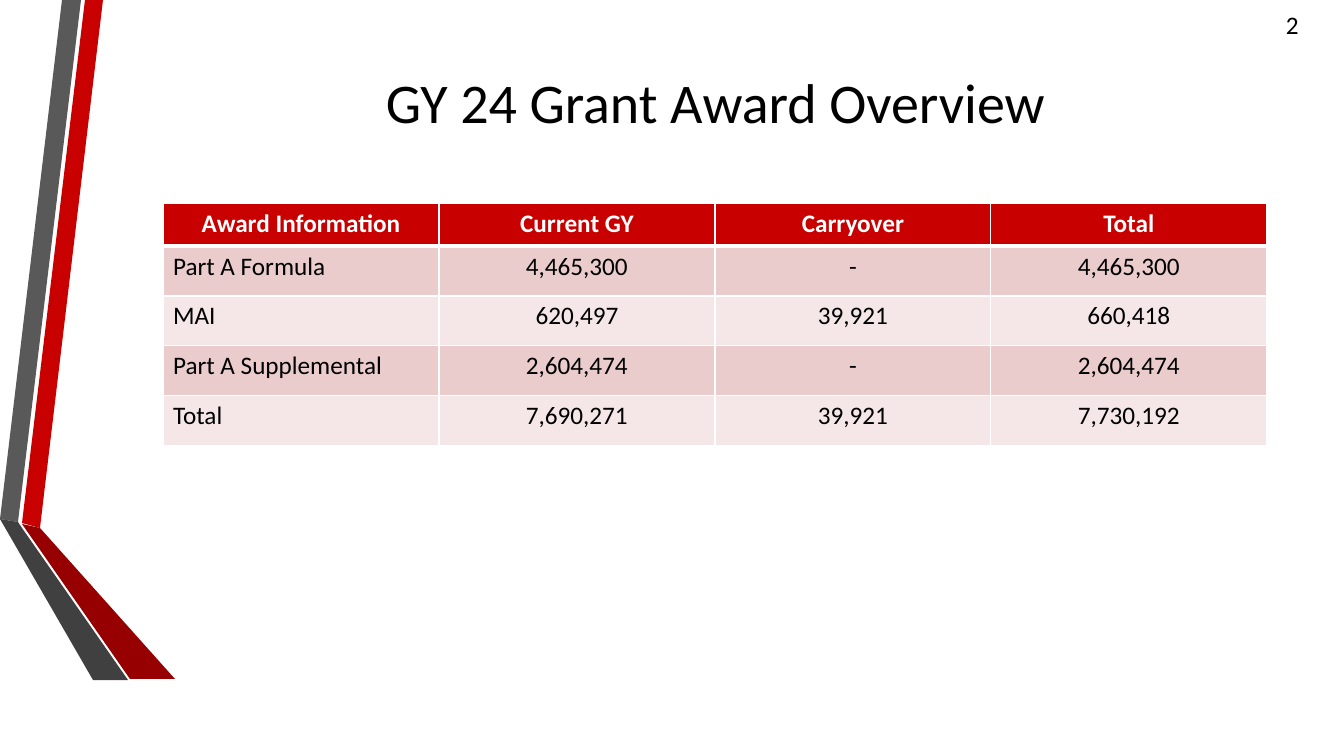
"""Builds the grant award overview slide with its ribbon and award table."""
from lxml import etree
from pptx import Presentation
from pptx.dml.color import RGBColor
from pptx.enum.text import MSO_ANCHOR, PP_ALIGN
from pptx.oxml.ns import qn
from pptx.util import Pt

LEFT, CENTER = PP_ALIGN.LEFT, PP_ALIGN.CENTER
MIDDLE = MSO_ANCHOR.MIDDLE
TITLE_ONLY = 5
EMU_PER_PX = 914400 / 100.8

COLORS = {
    "red": "C80000",
    "dark red": "960000",
    "gray": "595959",
    "dark gray": "404040",
    "band": "EBCCCC",
    "light band": "F5E7E7",
    "white": "FFFFFF",
    "black": "000000",
}

RIBBON = [
    ("red", [(22, 523), (40, 528), (103, 0), (85, 0)]),
    ("gray", [(81, 0), (62, 0), (0, 519), (18, 522)]),
    ("dark red", [(22, 524), (130, 679), (175, 679), (40, 528)]),
    ("dark gray", [(128, 680), (22, 528), (18, 522), (0, 519), (93, 680)]),
]

AWARDS = [
    ("Award Information", "Current GY", "Carryover", "Total"),
    ("Part A Formula", "4,465,300", "-", "4,465,300"),
    ("MAI", "620,497", "39,921", "660,418"),
    ("Part A Supplemental", "2,604,474", "-", "2,604,474"),
    ("Total", "7,690,271", "39,921", "7,730,192"),
]


def px(length):
    """Turn px into EMU."""
    return round(length * EMU_PER_PX)


def rgb(color):
    """Look up a named colour."""
    return RGBColor.from_string(COLORS[color])


class SlideBuilder:
    """Holds the style and the current slide."""

    def __init__(self, slide, font="Calibri", size=18):
        """Keep the slide and its default text style."""
        self.slide, self.font, self.size = slide, font, size

    def add_text(self, frame, text, color="black", size=None, bold=False, align=LEFT):
        """Put one styled run into a text frame."""
        paragraph = frame.paragraphs[0]
        paragraph.alignment = align
        run = paragraph.add_run()
        run.text = text
        run.font.name, run.font.size = self.font, Pt(size or self.size)
        run.font.bold, run.font.color.rgb = bold, rgb(color)

    def title(self, text, left, top, width, height):
        """Place and fill the title placeholder."""
        heading = self.slide.shapes.title
        heading.left, heading.top = px(left), px(top)
        heading.width, heading.height = px(width), px(height)
        heading.text_frame.vertical_anchor = MIDDLE
        self.add_text(heading.text_frame, text, size=40, align=CENTER)

    def label(self, text, left, top, width, height):
        """Add a text box."""
        box = self.slide.shapes.add_textbox(px(left), px(top), px(width), px(height))
        box.text_frame.word_wrap = True
        self.add_text(box.text_frame, text)

    def polygon(self, points, color):
        """Add a filled outline without a border."""
        outline = self.slide.shapes.build_freeform(*points[0], scale=EMU_PER_PX)
        outline.add_line_segments(points[1:], close=True)
        panel = outline.convert_to_shape()
        panel.shadow.inherit = False
        panel.fill.solid()
        panel.fill.fore_color.rgb = rgb(color)
        panel.line.fill.background()

    def border(self, cell, side, points):
        """Draw one white cell border."""
        edge = etree.SubElement(cell._tc.get_or_add_tcPr(), qn(f"a:ln{side}"), w=str(Pt(points)))
        fill = etree.SubElement(edge, qn("a:solidFill"))
        etree.SubElement(fill, qn("a:srgbClr"), val=COLORS["white"])

    def cell(self, cell, text, row, column):
        """Style and fill one table cell by its place."""
        header = row == 0
        widths = {"L": 1, "R": 1, "T": 3 if row == 1 else 1, "B": 3 if header else 1}
        for side, points in widths.items():
            self.border(cell, side, points)
        cell.fill.solid()
        band = "band" if row % 2 else "light band"
        cell.fill.fore_color.rgb = rgb("red" if header else band)
        self.add_text(cell.text_frame, text, "white" if header else "black", bold=header,
                      align=CENTER if header or column else LEFT)

    def table(self, rows, left, top, column_width, header_height, row_height):
        """Add a table with a header row and banded body rows."""
        columns = len(rows[0])
        height = header_height + row_height * (len(rows) - 1)
        grid = self.slide.shapes.add_table(len(rows), columns, px(left), px(top),
                                           px(column_width * columns), px(height)).table
        grid.horz_banding = False
        for column in grid.columns:
            column.width = px(column_width)
        for r, values in enumerate(rows):
            grid.rows[r].height = px(row_height if r else header_height)
            for c, value in enumerate(values):
                self.cell(grid.cell(r, c), value, r, c)


def main():
    """Build and save the slide."""
    deck = Presentation()
    deck.slide_width, deck.slide_height = px(1344), px(756)
    overview = SlideBuilder(deck.slides.add_slide(deck.slide_layouts[TITLE_ONLY]))
    for color, points in RIBBON:
        overview.polygon(points, color)
    overview.label("2", 1276, 4, 68, 40)
    overview.title("GY 24 Grant Award Overview", 163, 4, 1105, 194)
    overview.table(AWARDS, 163, 203, 276, 43, 50)
    deck.save("out.pptx")


if __name__ == "__main__":
    main()
